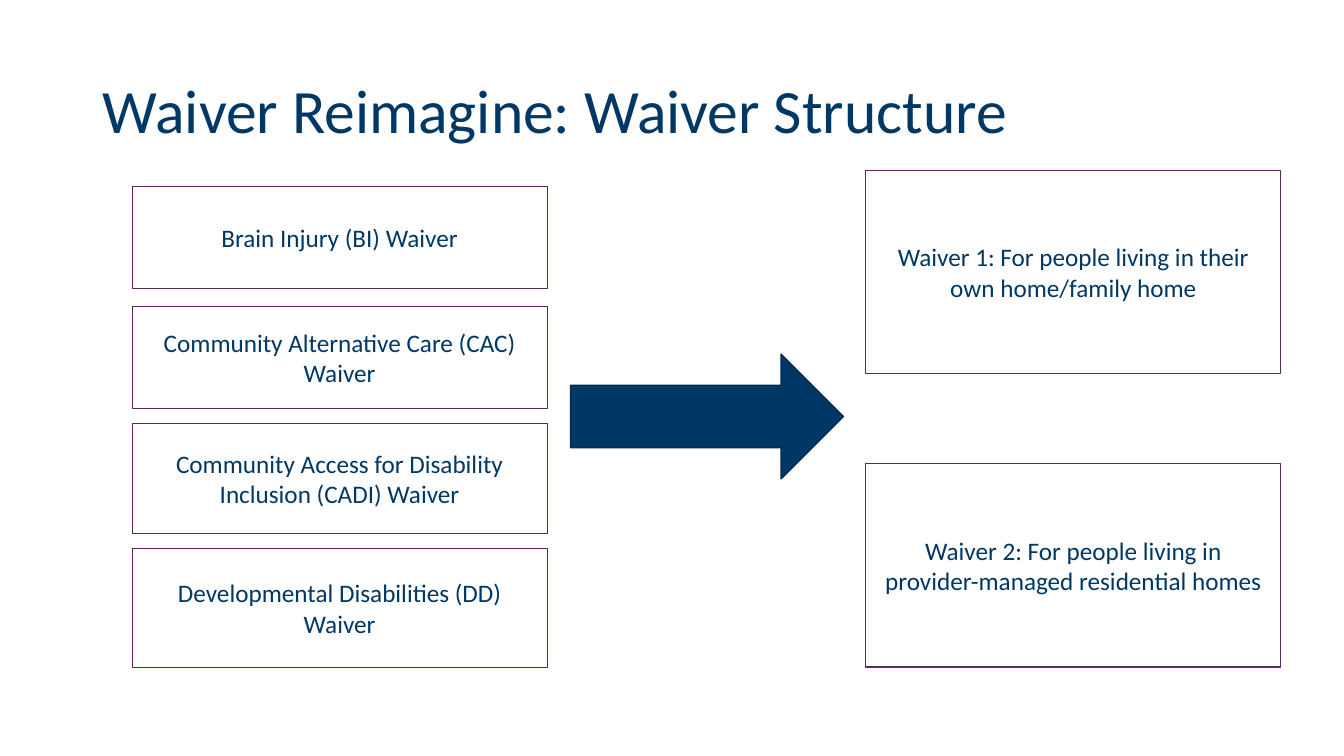
"""Build the slide that shows four current waivers becoming two."""
from pptx import Presentation
from pptx import util as u
from pptx.dml.color import RGBColor
from pptx.enum import shapes, text

NAVY = RGBColor(0x00, 0x38, 0x65)
DARK_NAVY = RGBColor(0x00, 0x29, 0x4B)
PURPLE = RGBColor(0x5D, 0x29, 0x5F)
WHITE = RGBColor(0xFF, 0xFF, 0xFF)

HEADING = "Waiver Reimagine: Waiver Structure"
CURRENT_WAIVERS = [
    ("Brain Injury (BI) Waiver", 4.7, 2.57),
    ("Community Alternative Care (CAC) Waiver", 7.72, 2.57),
    ("Community Access for Disability Inclusion (CADI) Waiver", 10.67, 2.77),
    ("Developmental Disabilities (DD) Waiver", 13.82, 3.0),
]
NEW_WAIVERS = [
    ("Waiver 1: For people living in their own home/family home", 4.29, 5.13),
    ("Waiver 2: For people living in provider-managed residential homes", 11.68, 5.13),
]
COLUMNS = [(3.33, CURRENT_WAIVERS), (21.82, NEW_WAIVERS)]
WAIVER_WIDTH = 10.46


def write(holder, words, size=18, align=text.PP_ALIGN.CENTER, spacing=1.0):
    frame = holder.text_frame
    frame.word_wrap = True
    frame.vertical_anchor = text.MSO_ANCHOR.MIDDLE
    paragraph = frame.paragraphs[0]
    paragraph.alignment = align
    paragraph.line_spacing = spacing
    run = paragraph.add_run()
    run.text = words
    run.font.name = "Calibri"
    run.font.size = u.Pt(size)
    run.font.color.rgb = NAVY


def draw(slide, preset, box, fill, outline):
    figure = slide.shapes.add_shape(preset, *map(u.Cm, box))
    figure.shadow.inherit = False
    figure.fill.solid()
    figure.fill.fore_color.rgb = fill
    figure.line.color.rgb = outline
    figure.line.width = u.Pt(0.85)
    return figure


def main():
    deck = Presentation()
    deck.slide_width, deck.slide_height = u.Cm(33.87), u.Cm(19.05)
    slide = deck.slides.add_slide(deck.slide_layouts[6])

    heading = slide.shapes.add_textbox(*map(u.Cm, (2.34, 1.02, 29.21, 3.68)))
    write(heading, HEADING, size=44, align=text.PP_ALIGN.LEFT, spacing=0.9)

    for left, waivers in COLUMNS:
        for words, top, height in waivers:
            box = (left, top, WAIVER_WIDTH, height)
            waiver = draw(slide, shapes.MSO_SHAPE.RECTANGLE, box, WHITE, PURPLE)
            write(waiver, words)

    draw(slide, shapes.MSO_SHAPE.RIGHT_ARROW, (14.38, 8.92, 6.88, 3.15), NAVY, DARK_NAVY)
    deck.save("out.pptx")


if __name__ == "__main__":
    main()
